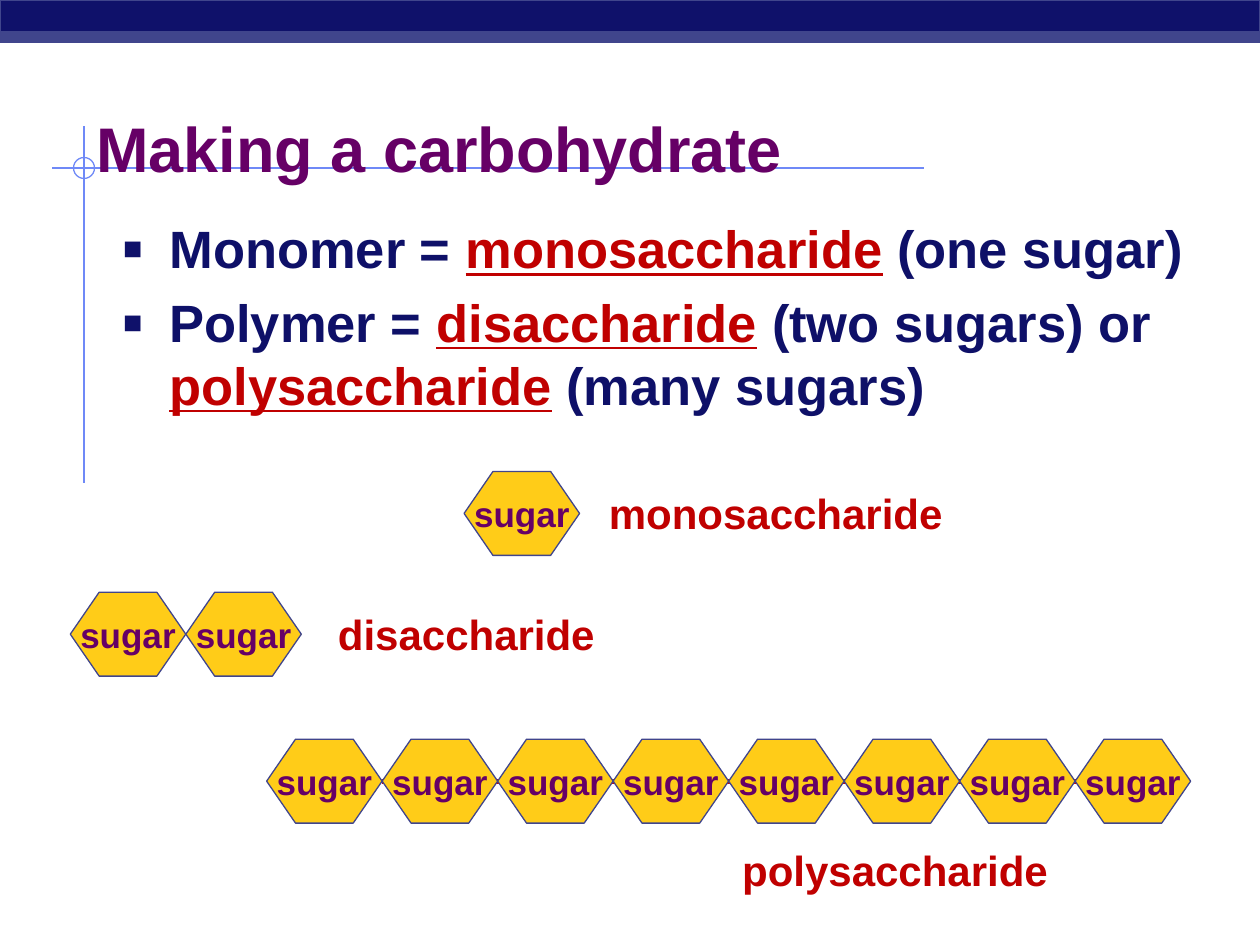
from dataclasses import dataclass

from lxml import etree
from pptx import Presentation
from pptx.dml.color import RGBColor
from pptx.enum.shapes import MSO_CONNECTOR, MSO_SHAPE
from pptx.enum.text import MSO_ANCHOR, PP_ALIGN
from pptx.oxml.ns import qn
from pptx.util import Inches, Pt

STRAIGHT = MSO_CONNECTOR.STRAIGHT
HEXAGON = MSO_SHAPE.HEXAGON
OVAL = MSO_SHAPE.OVAL
RECTANGLE = MSO_SHAPE.RECTANGLE
MIDDLE = MSO_ANCHOR.MIDDLE
TOP = MSO_ANCHOR.TOP
CENTER = PP_ALIGN.CENTER

WIDTH, HEIGHT = Inches(10), Inches(7.5)
COLUMNS, ROWS = 120, 90
SUGAR_COLUMNS, SUGAR_ROWS = 11, 8

FONT = "Arial"
NAVY = "0F116A"
SLATE = "40458C"
GUIDE = "6F89F7"
PURPLE = "660066"
BODY = "0E1068"
RED = "C00000"
BOND = "CC0000"
YELLOW = "FFCC18"


@dataclass
class Box:
    column: float
    row: float
    columns: float
    rows: float

    def lengths(self) -> tuple:
        return across(self.column), down(self.row), across(self.columns), down(self.rows)


@dataclass
class Words:
    text: str
    size: float
    color: str
    underline: bool = False


@dataclass
class Chain:
    column: float
    row: float
    sugars: int
    name: str
    name_box: Box


def across(columns: float) -> int:
    return round(WIDTH * columns / COLUMNS)


def down(rows: float) -> int:
    return round(HEIGHT * rows / ROWS)


def rgb(color: str) -> RGBColor:
    return RGBColor.from_string(color)


def add_words(paragraph, words: Words) -> None:
    run = paragraph.add_run()
    run.text = words.text
    run.font.name = FONT
    run.font.size = Pt(words.size)
    run.font.bold = True
    run.font.underline = words.underline
    run.font.color.rgb = rgb(words.color)


def add_text(slide, box: Box, paragraphs: list[list[Words]], anchor=TOP):
    frame = slide.shapes.add_textbox(*box.lengths()).text_frame
    frame.word_wrap = True
    frame.vertical_anchor = anchor
    for index, line in enumerate(paragraphs):
        paragraph = frame.add_paragraph() if index else frame.paragraphs[0]
        for words in line:
            add_words(paragraph, words)
    return frame


def add_bullet(paragraph) -> None:
    paragraph.space_before = Pt(6)
    properties = paragraph._p.get_or_add_pPr()
    properties.set("marL", str(Inches(0.38)))
    properties.set("indent", str(-Inches(0.38)))
    color = etree.SubElement(properties, qn("a:buClr"))
    etree.SubElement(color, qn("a:srgbClr"), val=NAVY)
    etree.SubElement(properties, qn("a:buSzPct"), val="120000")
    etree.SubElement(properties, qn("a:buFont"), typeface=FONT)
    etree.SubElement(properties, qn("a:buChar"), char="▪")


def add_line(slide, start: tuple, end: tuple, color: str, width: float) -> None:
    connector = slide.shapes.add_connector(
        STRAIGHT, across(start[0]), down(start[1]), across(end[0]), down(end[1])
    )
    connector.line.color.rgb = rgb(color)
    connector.line.width = Pt(width)
    etree.SubElement(connector._element.spPr, qn("a:effectLst"))


def add_figure(slide, kind, box: Box, line: str, fill: str | None = None):
    shape = slide.shapes.add_shape(kind, *box.lengths())
    shape.shadow.inherit = False
    shape.line.color.rgb = rgb(line)
    shape.line.width = Pt(0.75)
    if fill:
        shape.fill.solid()
        shape.fill.fore_color.rgb = rgb(fill)
    else:
        shape.fill.background()
    return shape


def add_sugar(slide, column: float, row: float) -> None:
    box = Box(column, row, SUGAR_COLUMNS, SUGAR_ROWS)
    hexagon = add_figure(slide, HEXAGON, box, SLATE, YELLOW)
    hexagon.adjustments[0] = 0.344
    frame = hexagon.text_frame
    frame.word_wrap = False
    frame.vertical_anchor = MIDDLE
    frame.paragraphs[0].alignment = CENTER
    add_words(frame.paragraphs[0], Words("sugar", 20, PURPLE))


def add_chain(slide, chain: Chain) -> None:
    if chain.sugars > 2:
        middle = chain.row + SUGAR_ROWS / 2
        end = chain.column + SUGAR_COLUMNS * (chain.sugars - 0.5)
        add_line(slide, (chain.column + SUGAR_COLUMNS, middle), (end, middle), BOND, 3)
    for index in range(chain.sugars):
        add_sugar(slide, chain.column + index * SUGAR_COLUMNS, chain.row)
    add_text(slide, chain.name_box, [[Words(chain.name, 24, RED)]])


def add_decoration(slide) -> None:
    add_line(slide, (5, 16), (88, 16), GUIDE, 1)
    add_line(slide, (8, 12), (8, 46), GUIDE, 1)
    add_figure(slide, OVAL, Box(7, 15, 2, 2), GUIDE)
    add_figure(slide, RECTANGLE, Box(0, 0, COLUMNS, 4), SLATE, NAVY)
    add_figure(slide, RECTANGLE, Box(0, 3, COLUMNS, 1), SLATE, SLATE)


def main() -> None:
    presentation = Presentation()
    presentation.slide_width, presentation.slide_height = WIDTH, HEIGHT
    slide = presentation.slides.add_slide(presentation.slide_layouts[6])
    add_decoration(slide)

    title = [Words("Making a carbohydrate", 36, PURPLE)]
    add_text(slide, Box(8, 9, 102, 10), [title], MIDDLE)

    definitions = [
        [
            Words("Monomer = ", 30, BODY),
            Words("monosaccharide", 30, RED, True),
            Words(" (one sugar)", 30, BODY),
        ],
        [
            Words("Polymer = ", 30, BODY),
            Words("disaccharide", 30, RED, True),
            Words(" (two sugars) or ", 30, BODY),
            Words("polysaccharide", 30, RED, True),
            Words(" (many sugars)", 30, BODY),
        ],
    ]
    body = add_text(slide, Box(10.4, 20, 106.4, 20), definitions)
    for paragraph in body.paragraphs:
        add_bullet(paragraph)

    chains = [
        Chain(25.4, 70.4, 8, "polysaccharide", Box(69.5, 79.8, 38, 6)),
        Chain(6.7, 56.4, 2, "disaccharide", Box(31, 57.4, 31.3, 6)),
        Chain(44.2, 44.9, 1, "monosaccharide", Box(56.8, 45.8, 40.2, 6)),
    ]
    for chain in chains:
        add_chain(slide, chain)

    presentation.save("out.pptx")


if __name__ == "__main__":
    main()
